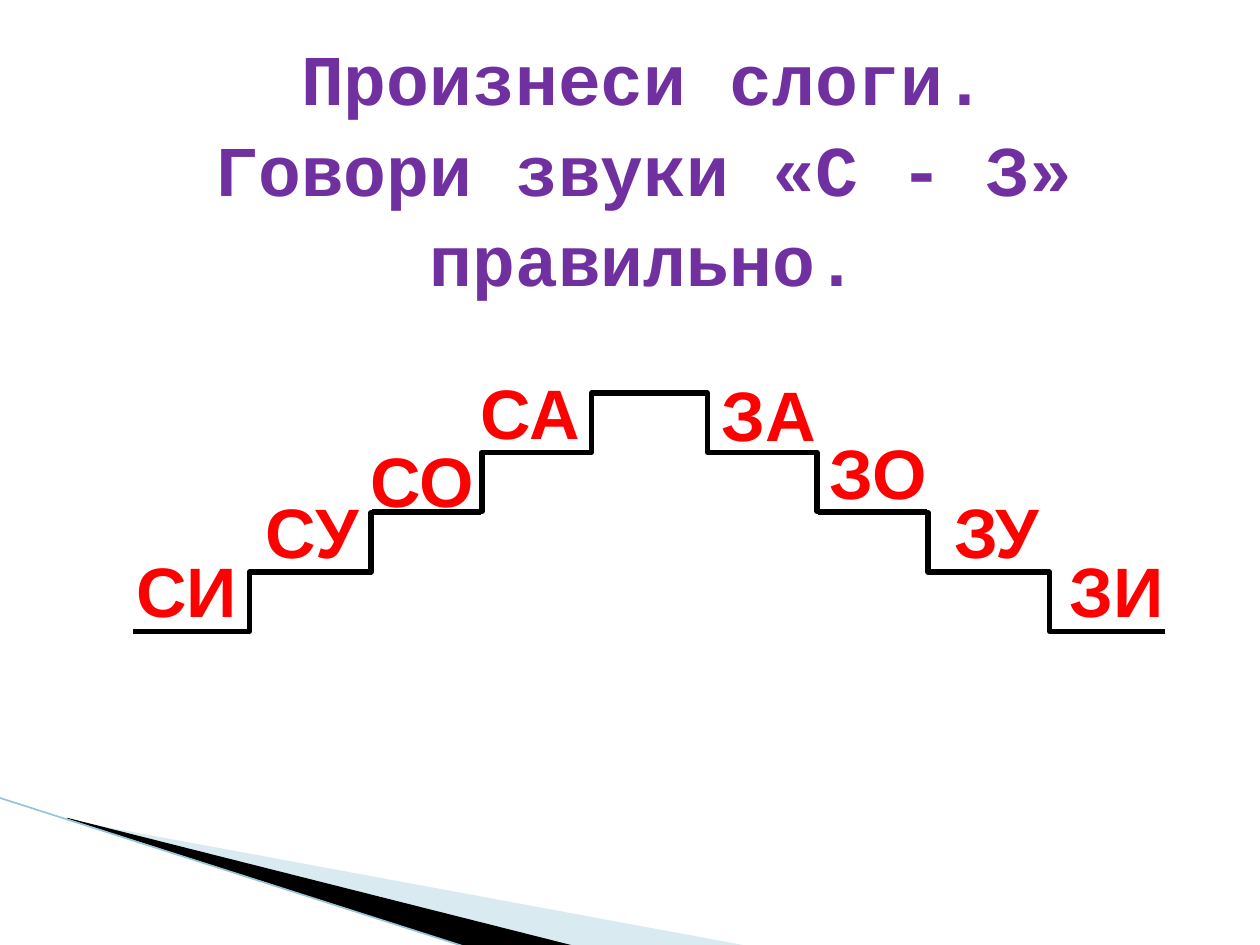
from typing import NamedTuple

import pptx
import pptx.dml.color
import pptx.enum.shapes
import pptx.enum.text
import pptx.oxml
import pptx.oxml.ns
import pptx.util
from lxml import etree
from pptx.util import Inches

RGBColor = pptx.dml.color.RGBColor
PALE_BLUE = RGBColor(0xA0, 0xCB, 0xDC)
EDGE_BLUE = RGBColor(0x97, 0xC5, 0xD8)
BLACK = RGBColor(0, 0, 0)
PURPLE = RGBColor(0x70, 0x30, 0xA0)
RED = RGBColor(0xFF, 0, 0)
OUTLINE_BLUE = RGBColor(0x05, 0x46, 0x97)

MIRROR_SUM = 10.31  # left x + right x of mirrored steps
RISE = 0.47


class Step(NamedTuple):
    left: float
    bottom: float
    width: float


class Syllable(NamedTuple):
    text: str
    left: float
    top: float


STEPS = [
    Step(1.06, 5.01, 1.84),
    Step(2.07, 4.54, 1.75),
    Step(2.95, 4.06, 1.75),
    Step(3.82, 3.59, 1.75),
]
SYLLABLES = [
    Syllable("СИ", 0.85, 4.3),
    Syllable("СУ", 1.85, 3.83),
    Syllable("СО", 2.72, 3.42),
    Syllable("СА", 3.58, 2.88),
    Syllable("ЗА", 5.47, 2.9),
    Syllable("ЗО", 6.34, 3.36),
    Syllable("ЗУ", 7.28, 3.83),
    Syllable("ЗИ", 8.23, 4.3),
]


def add_child(parent, tag: str, **attributes: str):
    return etree.SubElement(parent, pptx.oxml.ns.qn(tag), **attributes)


def add_wedge(page, points: list[tuple[float, float]], color: RGBColor, opacity: int = 100) -> None:
    corners = [(Inches(x), Inches(y)) for x, y in points]
    builder = page.shapes.build_freeform(*corners[0], scale=1.0)
    builder.add_line_segments(corners[1:], close=True)
    wedge = builder.convert_to_shape()
    wedge.shadow.inherit = False
    wedge.fill.solid()
    wedge.fill.fore_color.rgb = color
    wedge.line.fill.background()
    if opacity < 100:
        fill = wedge.element.spPr.find(pptx.oxml.ns.qn("a:solidFill"))
        add_child(fill[0], "a:alpha", val=str(opacity * 1000))


def add_line(page, kind, start: tuple[float, float], end: tuple[float, float],
             color: RGBColor, width: float) -> None:
    line = page.shapes.add_connector(kind, *(Inches(value) for value in (*start, *end)))
    line.line.color.rgb = color
    line.line.width = pptx.util.Pt(width)
    add_child(line.element.spPr, "a:effectLst")


def add_text(page, text: str, left: float, top: float, width: float, height: float, *,
             font: str, size: float, color: RGBColor, spacing: float = 1.0,
             inset_top: float = 0.05, outline: RGBColor | None = None) -> None:
    """Add a bold centred box, one paragraph for each line of text."""
    box = page.shapes.add_textbox(Inches(left), Inches(top), Inches(width), Inches(height))
    frame = box.text_frame
    frame.word_wrap = True
    frame.vertical_anchor = pptx.enum.text.MSO_ANCHOR.TOP
    frame.margin_top = Inches(inset_top)
    frame.text = text
    for para in frame.paragraphs:
        para.alignment = pptx.enum.text.PP_ALIGN.CENTER
        para.line_spacing = spacing
        for span in para.runs:
            span.font.name = font
            span.font.size = pptx.util.Pt(size)
            span.font.bold = True
            span.font.color.rgb = color
            if outline is not None:
                properties = span.font.fill._xPr
                border = add_child(properties, "a:ln", w="12700")
                add_child(add_child(border, "a:solidFill"), "a:srgbClr", val=str(outline))
                properties.insert(0, border)


def main() -> None:
    deck = pptx.Presentation()
    deck.slide_width, deck.slide_height = Inches(10), Inches(7.5)
    page = deck.slides.add_slide(deck.slide_layouts[6])
    connector = pptx.enum.shapes.MSO_CONNECTOR

    add_wedge(page, [(0.55, 6.51), (5.95, 7.51), (4.56, 7.51), (0.55, 6.5)], PALE_BLUE, 40)
    add_wedge(page, [(0.53, 6.49), (4.57, 7.51), (3.72, 7.52), (0.54, 6.5)], BLACK)
    add_line(page, connector.STRAIGHT, (-0.01, 6.33), (3.71, 7.52), EDGE_BLUE, 0.95)

    add_text(page, "Произнеси слоги.\nГовори звуки «С - З» правильно.", 0.25, 0.1, 9.72, 1.83,
             font="Courier New", size=40.8, color=PURPLE, spacing=1.06, inset_top=0.13)

    for step in STEPS:
        right, top = step.left + step.width, step.bottom - RISE
        add_line(page, connector.ELBOW, (step.left, step.bottom), (right, top), BLACK, 3)
        add_line(page, connector.ELBOW, (MIRROR_SUM - step.left, step.bottom),
                 (MIRROR_SUM - right, top), BLACK, 3)

    for syllable in SYLLABLES:
        add_text(page, syllable.text, syllable.left, syllable.top, 1.26, 0.77,
                 font="Arial", size=40, color=RED, outline=OUTLINE_BLUE)

    deck.save("out.pptx")


if __name__ == "__main__":
    main()
